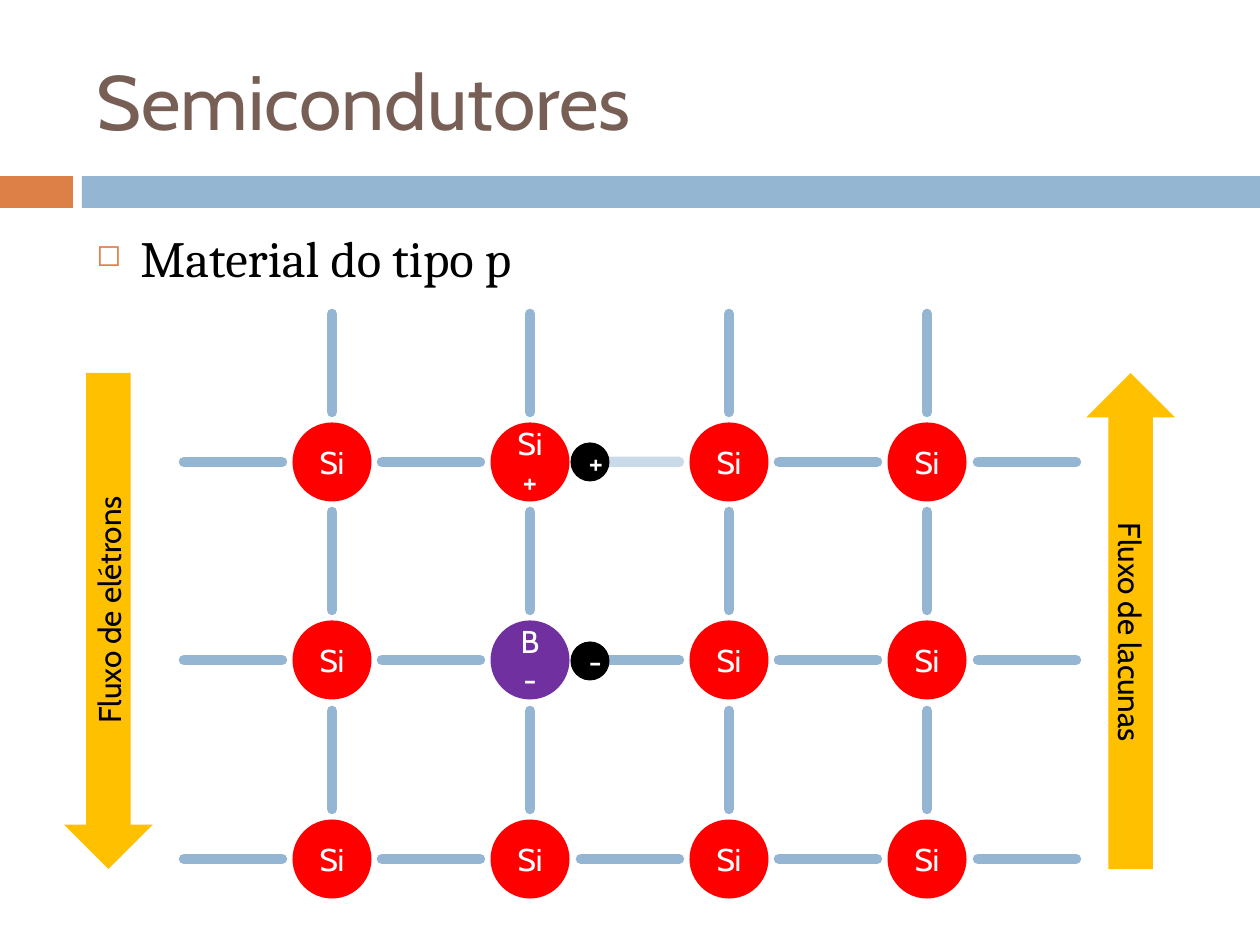
from dataclasses import dataclass

from lxml import etree
from pptx import Presentation
from pptx.dml.color import RGBColor
from pptx.enum.shapes import MSO_CONNECTOR, MSO_SHAPE
from pptx.enum.text import MSO_ANCHOR, PP_ALIGN
from pptx.oxml.ns import qn
from pptx.util import Pt

RECT, OVAL, DOWN = MSO_SHAPE.RECTANGLE, MSO_SHAPE.OVAL, MSO_SHAPE.DOWN_ARROW
LINE = MSO_CONNECTOR.STRAIGHT
MID, TOP = MSO_ANCHOR.MIDDLE, MSO_ANCHOR.TOP
CENTER, LEFT = PP_ALIGN.CENTER, PP_ALIGN.LEFT


@dataclass(frozen=True)
class Theme:
    """Colours, fonts and type sizes."""
    blue: str = "94B6D2"
    orange: str = "DD8047"
    brown: str = "775F55"
    red: str = "FF0000"
    purple: str = "7030A0"
    gold: str = "FFC000"
    black: str = "000000"
    white: str = "FFFFFF"
    sans: str = "Cabin"
    serif: str = "Cambria"
    title: int = 44
    body: int = 29
    label: int = 18
    bond: int = 6


def emu(px):
    """Turn px into EMU."""
    return round(px * 914400 / 126)


class Deck:
    """Holds the theme and the current slide."""

    def __init__(self, theme):
        """Open a blank slide."""
        self.theme = theme
        self.prs = Presentation()
        self.prs.slide_width, self.prs.slide_height = emu(1260), emu(945)
        self.slide = self.prs.slides.add_slide(self.prs.slide_layouts[6])

    def label(self, shape, text, size, color, font, align=CENTER, anchor=MID):
        """Set and style the text of a shape."""
        frame = shape.text_frame
        frame.text = text
        frame.word_wrap = True
        frame.vertical_anchor = anchor
        para = frame.paragraphs[0]
        para.alignment = align
        style = para.runs[0].font
        style.size, style.name = Pt(size), font
        style.color.rgb = RGBColor.from_string(color)
        return para

    def shape(self, kind, x, y, w, h, fill):
        """Add a flat filled shape."""
        item = self.slide.shapes.add_shape(kind, emu(x), emu(y), emu(w), emu(h))
        item.shadow.inherit = False
        item.fill.solid()
        item.fill.fore_color.rgb = RGBColor.from_string(fill)
        item.line.fill.background()
        return item

    def text(self, x, y, w, h, *args):
        """Add a text box with one paragraph."""
        box = self.slide.shapes.add_textbox(emu(x), emu(y), emu(w), emu(h))
        return self.label(box, *args)

    def bullet(self, para, mark, color, indent):
        """Give a paragraph a hanging bullet."""
        para.space_before = Pt(7)
        props = para._p.get_or_add_pPr()
        props.set("marL", str(emu(indent)))
        props.set("indent", str(-emu(indent)))
        tint = etree.SubElement(props, qn("a:buClr"))
        etree.SubElement(tint, qn("a:srgbClr"), val=color)
        etree.SubElement(props, qn("a:buSzPct"), val="60000")
        etree.SubElement(props, qn("a:buChar"), char=mark)

    def ball(self, x, y, size, fill, text):
        """Add a labelled circle centred on a point."""
        item = self.shape(OVAL, x - size / 2, y - size / 2, size, size, fill)
        self.label(item, text, self.theme.label, self.theme.white, self.theme.sans)

    def bond(self, x1, y1, x2, y2, faint=False):
        """Add a thick line with round ends."""
        item = self.slide.shapes.add_connector(LINE, emu(x1), emu(y1), emu(x2), emu(y2))
        item.line.width = Pt(self.theme.bond)
        item.line.color.rgb = RGBColor.from_string(self.theme.blue)
        props = item._element.spPr
        stroke = props.find(qn("a:ln"))
        stroke.set("cap", "rnd")
        if faint:
            tint = stroke.find(".//" + qn("a:srgbClr"))
            etree.SubElement(tint, qn("a:alpha"), val="50000")
        etree.SubElement(props, qn("a:effectLst"))

    def arrow(self, x, text, turn=0):
        """Add a tall arrow with text along it."""
        item = self.shape(DOWN, x, 373, 89, 496, self.theme.gold)
        item.rotation = turn
        self.label(item, text, self.theme.label, self.theme.black, self.theme.sans)
        item.text_frame._txBody.bodyPr.set("vert", "vert270")


def main():
    """Build the slide and save it."""
    look = Theme()
    deck = Deck(look)
    deck.shape(RECT, 0, 176, 73, 32, look.orange)
    deck.shape(RECT, 82, 176, 1178, 32, look.blue)
    deck.text(84, 32, 1124, 136, "Semicondutores", look.title, look.brown,
              look.sans, LEFT)
    para = deck.text(84, 221, 1124, 659, "Material do tipo p", look.body,
                     look.black, look.serif, LEFT, TOP)
    deck.bullet(para, "◻", look.orange, 44)

    cols = [332 + 397 * i // 2 for i in range(5)]
    rows = [462 + 397 * i // 2 for i in range(3)]
    odd = {(0, 1): ("Si+", look.red), (1, 1): ("B-", look.purple)}
    near, far = 50, 148
    for r, y in enumerate(rows):
        for c, x in enumerate(cols):
            deck.bond(x - far, y, x - near, y, (r, c) == (0, 2))
        for c, x in enumerate(cols[:-1]):
            deck.bond(x, y - far, x, y - near)
            text, fill = odd.get((r, c), ("Si", look.red))
            deck.ball(x, y, 79, fill, text)

    for text, y in zip("-+", (rows[1] + 1, rows[0])):
        deck.ball(590, y, 39, look.black, text)
    deck.arrow(64, "Fluxo de elétrons")
    deck.arrow(1086, "Fluxo de lacunas", 180)
    deck.prs.save("out.pptx")


if __name__ == "__main__":
    main()
